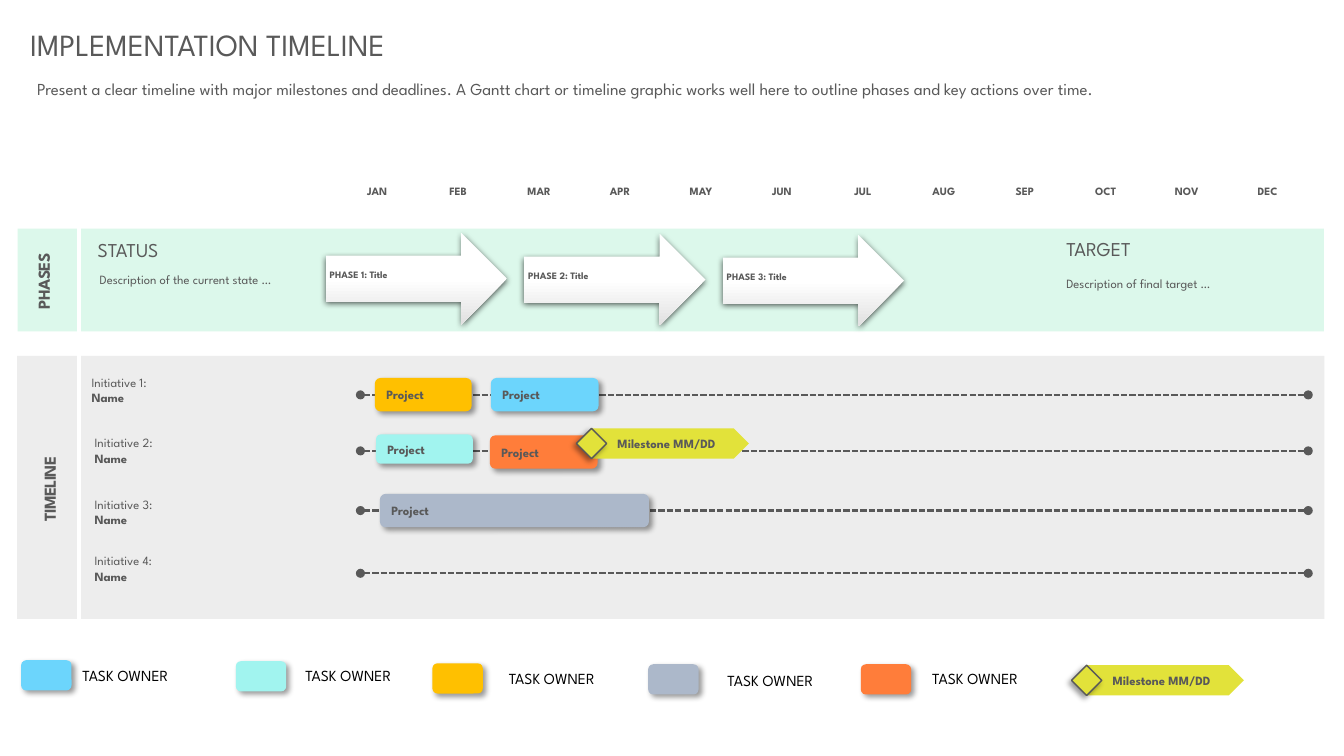
from lxml.etree import SubElement
from pptx import Presentation
from pptx.dml.color import RGBColor
from pptx.enum.dml import MSO_LINE
from pptx.enum.shapes import MSO_CONNECTOR, MSO_SHAPE
from pptx.enum.text import MSO_ANCHOR, PP_ALIGN
from pptx.oxml.ns import qn
from pptx.util import Pt

THEME = {
    "font": "League Spartan",
    "ink": "595959", "black": "000000", "white": "FFFFFF", "arrow_end": "E1E1E1",
    "mint": "DCF8EB", "pale": "EDEDED", "lime": "E2E23A",
    "blue": "6CD5FC", "aqua": "A1F4EF", "amber": "FFC000",
    "slate": "ACB8CA", "orange": "FF7D3A",
    "title": 22, "heading": 14, "body": 12, "legend": 11, "small": 9, "month": 8, "phase": 7,
}
# alpha percent, blur, distance, direction in degrees
SHADOWS = {"bar": (40, 4, 3, 45), "diamond": (40, 4, 3, 135), "arrow": (63, 4.5, 1.5, 90)}

MONTHS = "JAN FEB MAR APR MAY JUN JUL AUG SEP OCT NOV DEC".split()
BANDS = [("pale", (12.2, 254.2, 933.8, 187.9)), ("mint", (12.6, 163.4, 933.1, 73.4))]
BAND_NAMES = [("PHASES", (-2.9, 190.1, 67.7, 21.6)), ("TIMELINE", (-59.8, 338.4, 190.1, 21.6))]
TEXTS = [
    ("IMPLEMENTATION TIMELINE", "title", (14.4, 15.1, 658, 33.8), PP_ALIGN.LEFT),
    ("Present a clear timeline with major milestones and deadlines. A Gantt chart or timeline "
     "graphic works well here to outline phases and key actions over time.",
     "body", (19.4, 52.6, 921.6, 21.6), PP_ALIGN.JUSTIFY),
    ("STATUS", "heading", (62.6, 166.3, 197.3, 24.5), PP_ALIGN.LEFT),
    ("Description of the current state …", "small", (64.1, 190.8, 180.7, 18), PP_ALIGN.LEFT),
    ("TARGET", "heading", (754.6, 165.6, 191.5, 24.5), PP_ALIGN.LEFT),
    ("Description of final target …", "small", (754.6, 193.7, 176.4, 18), PP_ALIGN.LEFT),
]
PHASES = ["PHASE 1: Title", "PHASE 2: Title", "PHASE 3: Title"]
# initiative, label left, label top, line height on the slide
INITIATIVES = [
    ("Initiative 1:", 58.3, 264.2, 282.1),
    ("Initiative 2:", 60.5, 307.4, 322.1),
    ("Initiative 3:", 60.5, 351.4, 364.7),
    ("Initiative 4:", 60.5, 391.7, 409.5),
]
PROJECTS = [
    ("amber", (267.8, 270, 69.1, 23.8)),
    ("blue", (350.6, 270, 77, 23.8)),
    ("aqua", (268.6, 310.3, 69.1, 20.9)),
    ("slate", (271.4, 352.8, 192.2, 23.8)),
    ("orange", (349.9, 311, 77, 23.8)),
]
# colour, swatch left, swatch top, label left, label top
OWNERS = [
    ("blue", 15.1, 471.6, 51.8, 472.3),
    ("aqua", 168.5, 472.3, 211, 472.3),
    ("amber", 308.9, 473.8, 356.4, 474.5),
    ("slate", 463, 474.5, 512.6, 475.9),
    ("orange", 614.9, 474.5, 658.8, 474.5),
]
MILESTONES = [(422.6, 306), (776.2, 475.2)]


def color(name):
    return RGBColor.from_string(THEME[name])


def set_values(target, values):
    for name, value in values.items():
        setattr(target, name, value)


def write(frame, lines, size, ink="ink", bold=False, align=PP_ALIGN.LEFT,
          anchor=MSO_ANCHOR.TOP, paragraph_format=None, tracking=None, frame_format=None):
    """Put one paragraph per line; bold may be one flag or one flag per line."""
    set_values(frame, {"word_wrap": True, "vertical_anchor": anchor, **(frame_format or {})})
    flags = bold if isinstance(bold, list) else [bold] * len(lines)
    for index, (line, flag) in enumerate(zip(lines, flags)):
        paragraph = frame.add_paragraph() if index else frame.paragraphs[0]
        set_values(paragraph, {"alignment": align, **(paragraph_format or {})})
        run = paragraph.add_run()
        run.text = line
        set_values(run.font, {"name": THEME["font"], "size": Pt(THEME[size]), "bold": flag})
        run.font.color.rgb = color(ink)
        if tracking is not None:
            run._r.get_or_add_rPr().set("spc", str(tracking))


def add_text(slide, box, lines, size, rotation=0, **options):
    text_box = slide.shapes.add_textbox(*map(Pt, box))
    text_box.rotation = rotation
    write(text_box.text_frame, lines, size, **options)


def add_block(slide, kind, box, fill, shadow=None):
    shape = slide.shapes.add_shape(kind, *map(Pt, box))
    shape.fill.solid()
    shape.fill.fore_color.rgb = color(fill)
    shape.line.fill.background()
    shape.shadow.inherit = False
    if shadow:
        alpha, blur, distance, direction = SHADOWS[shadow]
        effects = shape._element.spPr.find(qn("a:effectLst"))
        outer = SubElement(effects, qn("a:outerShdw"), blurRad=str(Pt(blur)), dist=str(Pt(distance)),
                           dir=str(direction * 60000), algn="ctr", rotWithShape="0")
        shade = SubElement(outer, qn("a:srgbClr"), val=THEME["black"])
        SubElement(shade, qn("a:alpha"), val=str(alpha * 1000))
    return shape


def add_line(slide, start, end, ink, width, dash=None):
    connector = slide.shapes.add_connector(MSO_CONNECTOR.STRAIGHT, *map(Pt, start + end))
    connector.line.color.rgb = color(ink)
    set_values(connector.line, {"width": Pt(width), "dash_style": dash})
    SubElement(connector._element.spPr, qn("a:effectLst"))


def add_months(slide):
    column = 57.84
    frame = slide.shapes.add_table(1, len(MONTHS), Pt(240.5), Pt(129.6),
                                   Pt(column * len(MONTHS)), Pt(16.5))
    table = frame.table
    set_values(table, {"first_row": False, "horz_banding": False})
    table.rows[0].height = Pt(16.5)
    for index, month in enumerate(MONTHS):
        table.columns[index].width = Pt(column)
        cell = table.cell(0, index)
        cell.fill.solid()
        cell.fill.fore_color.rgb = color("white")
        cell.vertical_anchor = MSO_ANCHOR.MIDDLE
        write(cell.text_frame, [month], "month", bold=True, align=PP_ALIGN.CENTER)


def add_initiative(slide, name, left, top, middle):
    dot = 6.5
    add_line(slide, (259.9, middle), (936, middle), "ink", 1.5, MSO_LINE.SQUARE_DOT)
    for dot_left in (254.2, 931.2):
        add_block(slide, MSO_SHAPE.OVAL, (dot_left, middle - dot / 2, dot, dot), "ink")
    add_text(slide, (left, top, 186, 28.8), [name, "Name"], "small", bold=[False, True])


def add_phase(slide, index, title):
    left, top = 232.6 + 141.8 * index, 166.3 + 0.7 * index
    arrow = add_block(slide, MSO_SHAPE.RIGHT_ARROW, (left, top, 129.6, 65.5), "white", "arrow")
    arrow.fill.gradient()
    arrow.fill.gradient_angle = 270
    for stop, position, name in zip(arrow.fill.gradient_stops, (0.5, 1), ("white", "arrow_end")):
        stop.position = position
        stop.color.rgb = color(name)
    add_text(slide, (left + 2.9, top + 20.9, 99.4, 19.4), [title], "phase", bold=True,
             anchor=MSO_ANCHOR.MIDDLE, paragraph_format={"line_spacing": 0.9},
             frame_format={"margin_left": 0, "margin_right": 0,
                           "margin_top": Pt(5.8), "margin_bottom": Pt(5.8)})


def add_milestone(slide, left, top):
    height = 21.6
    flag = add_block(slide, MSO_SHAPE.PENTAGON, (left, top, 112.3, height), "lime")
    write(flag.text_frame, ["Milestone MM/DD"], "small", bold=True,
          align=PP_ALIGN.CENTER, anchor=MSO_ANCHOR.MIDDLE)
    diamond = add_block(slide, MSO_SHAPE.DIAMOND, (left - height / 2, top, height, height),
                        "lime", "diamond")
    diamond.line.color.rgb = color("ink")
    diamond.line.width = Pt(1)


def main():
    presentation = Presentation()
    set_values(presentation, {"slide_width": Pt(960), "slide_height": Pt(540)})
    slide = presentation.slides.add_slide(presentation.slide_layouts[6])

    for fill, box in BANDS:
        add_block(slide, MSO_SHAPE.RECTANGLE, box, fill)
    add_line(slide, (56.2, 70.6), (56.2, 538.6), "white", 3)
    for name, box in BAND_NAMES:
        add_text(slide, box, [name], "body", rotation=270, bold=True,
                 align=PP_ALIGN.CENTER, tracking=-50)
    add_months(slide)
    for initiative in INITIATIVES:
        add_initiative(slide, *initiative)
    for fill, box in PROJECTS:
        bar = add_block(slide, MSO_SHAPE.ROUNDED_RECTANGLE, box, fill, "bar")
        write(bar.text_frame, ["Project"], "small", bold=True, anchor=MSO_ANCHOR.MIDDLE)
    for index, title in enumerate(PHASES):
        add_phase(slide, index, title)
    for fill, left, top, label_left, label_top in OWNERS:
        add_block(slide, MSO_SHAPE.ROUNDED_RECTANGLE, (left, top, 36, 21.6), fill, "bar")
        add_text(slide, (label_left, label_top, 89.3, 20.9), ["TASK OWNER"], "legend", ink="black")
    for left, top in MILESTONES:
        add_milestone(slide, left, top)
    for text, size, box, align in TEXTS:
        add_text(slide, box, [text], size, align=align)

    presentation.save("out.pptx")


if __name__ == "__main__":
    main()
